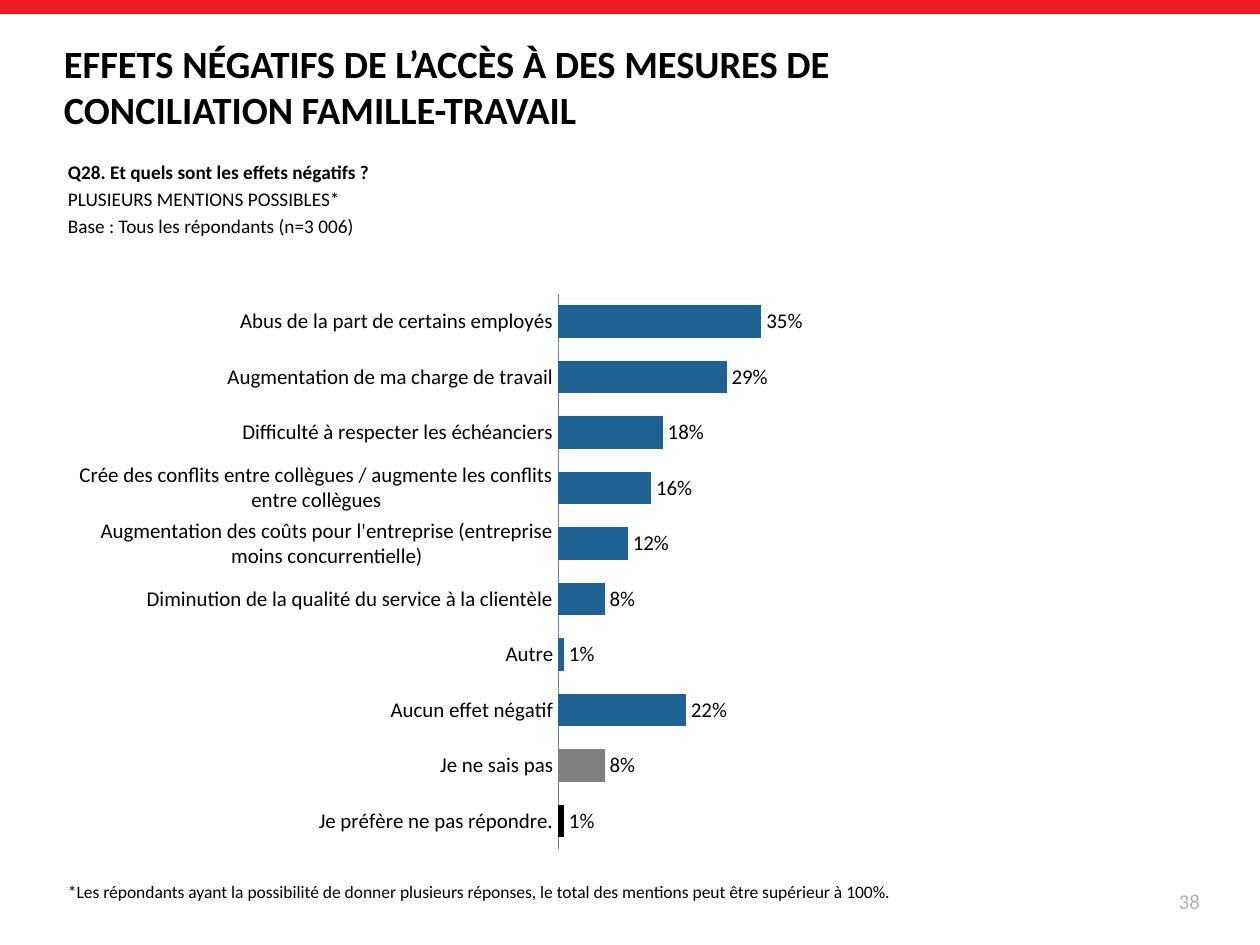
import pptx
import pptx.chart.data
import pptx.dml.color
import pptx.enum.chart
import pptx.enum.shapes
import pptx.enum.text
import pptx.oxml
import pptx.oxml.ns
import pptx.util
from pptx.util import Cm

RED = pptx.dml.color.RGBColor(0xED, 0x1C, 0x24)
BLUE = pptx.dml.color.RGBColor(0x1F, 0x63, 0x94)
GREY = pptx.dml.color.RGBColor(0x80, 0x80, 0x80)
LIGHT_GREY = pptx.dml.color.RGBColor(0xB3, 0xB3, 0xB3)
BLACK = pptx.dml.color.RGBColor(0, 0, 0)
FONT = "Calibri"
ALIGN = pptx.enum.text.PP_ALIGN
ANCHOR = pptx.enum.text.MSO_ANCHOR

presentation = pptx.Presentation()
presentation.slide_width = Cm(25.4)
presentation.slide_height = Cm(19.05)
slide = presentation.slides.add_slide(presentation.slide_layouts[6])


def add_text(left, top, width, height, lines, size, color=BLACK,
             align=ALIGN.LEFT, anchor=ANCHOR.TOP):
    """Add a text box; each line is a (text, bold) pair."""
    shape = slide.shapes.add_textbox(Cm(left), Cm(top), Cm(width), Cm(height))
    frame = shape.text_frame
    frame.word_wrap = True
    frame.vertical_anchor = anchor
    for index, (text, bold) in enumerate(lines):
        paragraph = frame.add_paragraph() if index else frame.paragraphs[0]
        paragraph.alignment = align
        if index:
            paragraph.space_before = pptx.util.Pt(size * 0.2)
        run = paragraph.add_run()
        run.text = text
        run.font.name = FONT
        run.font.size = pptx.util.Pt(size)
        run.font.bold = bold
        run.font.color.rgb = color


# Top band
band = slide.shapes.add_shape(
    pptx.enum.shapes.MSO_SHAPE.RECTANGLE, 0, 0, presentation.slide_width, Cm(0.28))
band.shadow.inherit = False
band.fill.solid()
band.fill.fore_color.rgb = RED
band.line.fill.background()

# Title, question, footnote and page number
add_text(1.04, 1.07, 19.46, 1.32,
         [("EFFETS NÉGATIFS DE L’ACCÈS À DES MESURES DE CONCILIATION FAMILLE-TRAVAIL", True)],
         22, anchor=ANCHOR.MIDDLE)
add_text(1.12, 3.1, 20.42, 3,
         [("Q28. Et quels sont les effets négatifs ?", True),
          ("PLUSIEURS MENTIONS POSSIBLES*", False),
          ("Base : Tous les répondants (n=3 006)", False)],
         11, align=ALIGN.JUSTIFY)
add_text(1.12, 17.63, 19.79, 0.69,
         [("*Les répondants ayant la possibilité de donner plusieurs réponses, "
           "le total des mentions peut être supérieur à 100%.", False)], 10)
add_text(18.52, 17.65, 5.92, 1.02, [("38", False)], 12, LIGHT_GREY,
         ALIGN.RIGHT, ANCHOR.MIDDLE)

# Bar chart: answer, share, bar colour
answers = [
    ("Abus de la part de certains employés", 0.35, BLUE),
    ("Augmentation de ma charge de travail", 0.29, BLUE),
    ("Difficulté à respecter les échéanciers", 0.18, BLUE),
    ("Crée des conflits entre collègues / augmente les conflits entre collègues", 0.16, BLUE),
    ("Augmentation des coûts pour l'entreprise (entreprise moins concurrentielle)", 0.12, BLUE),
    ("Diminution de la qualité du service à la clientèle", 0.08, BLUE),
    ("Autre", 0.01, BLUE),
    ("Aucun effet négatif", 0.22, BLUE),
    ("Je ne sais pas", 0.08, GREY),
    ("Je préfère ne pas répondre.", 0.01, BLACK),
]
chart_data = pptx.chart.data.CategoryChartData(number_format="0%")
chart_data.categories = [answer for answer, share, color in answers]
chart_data.add_series("Series 1", [share for answer, share, color in answers])
chart = slide.shapes.add_chart(
    pptx.enum.chart.XL_CHART_TYPE.BAR_CLUSTERED,
    Cm(1.6), Cm(5.21), Cm(21.36), Cm(11.91), chart_data).chart
chart.has_legend = False
chart.has_title = False
chart.font.name = FONT
chart.font.size = pptx.util.Pt(12)
chart.font.color.rgb = BLACK

# Axes
category_axis = chart.category_axis
category_axis.reverse_order = True
category_axis.major_tick_mark = pptx.enum.chart.XL_TICK_MARK.NONE
category_axis.format.line.color.rgb = GREY
category_axis.format.line.width = pptx.util.Pt(0.75)
value_axis = chart.value_axis
value_axis.minimum_scale = 0
value_axis.maximum_scale = 1
value_axis.has_major_gridlines = False
value_axis.visible = False

# Bars and labels
plot = chart.plots[0]
plot.gap_width = 70
plot.vary_by_categories = False
series = plot.series[0]
series.format.fill.solid()
series.format.fill.fore_color.rgb = BLUE
for index, (answer, share, color) in enumerate(answers):
    if color != BLUE:
        fill = series.points[index].format.fill
        fill.solid()
        fill.fore_color.rgb = color
labels = series.data_labels
labels.show_value = True
labels.number_format = "0%"
labels.number_format_is_linked = False
labels.position = pptx.enum.chart.XL_LABEL_POSITION.OUTSIDE_END

# Fixed plot area, leaving the left part to the answers
plot_area = chart._chartSpace.chart.plotArea
for layout in plot_area.findall(pptx.oxml.ns.qn("c:layout")):
    plot_area.remove(layout)
plot_area.insert(0, pptx.oxml.parse_xml(
    f'<c:layout {pptx.oxml.ns.nsdecls("c")}><c:manualLayout>'
    '<c:layoutTarget val="inner"/><c:xMode val="edge"/><c:yMode val="edge"/>'
    '<c:x val="0.45"/><c:y val="0.06"/><c:w val="0.55"/><c:h val="0.94"/>'
    '</c:manualLayout></c:layout>'))

presentation.save("out.pptx")
